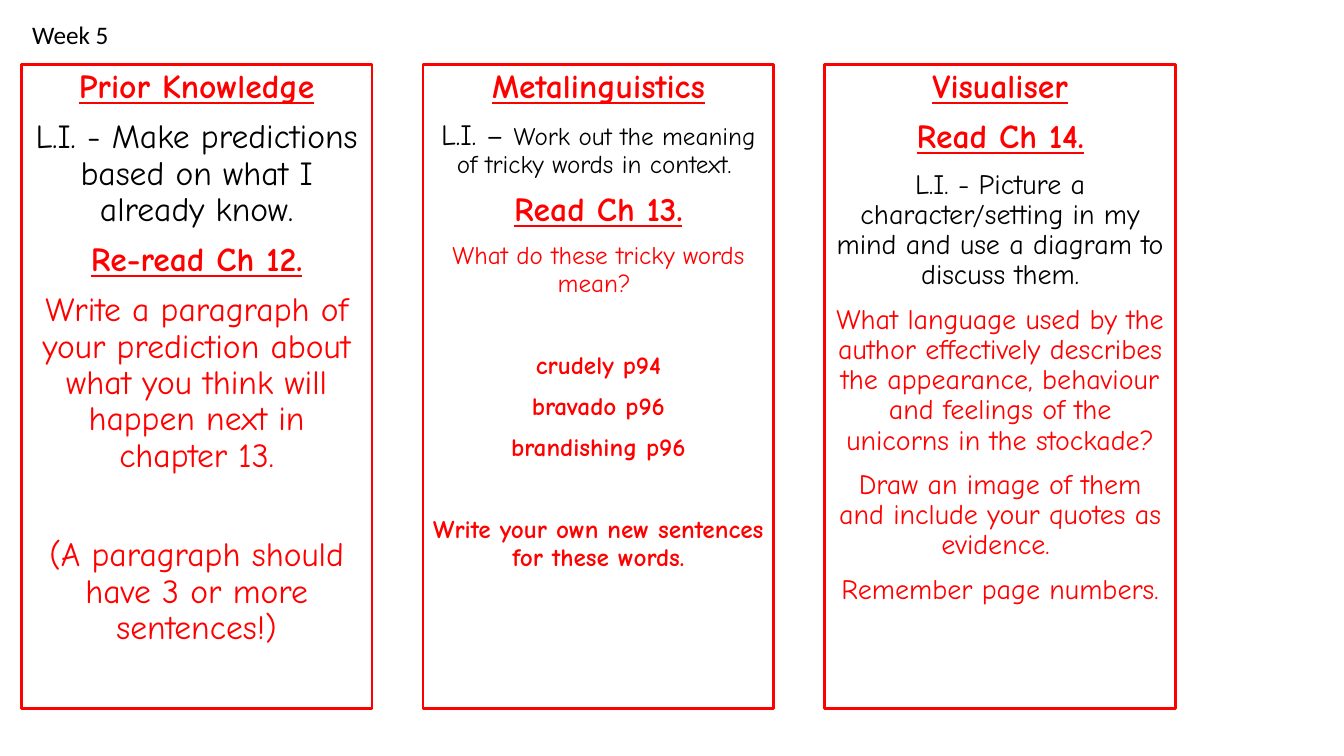
from dataclasses import dataclass

from pptx import Presentation
from pptx.dml.color import RGBColor
from pptx.enum.shapes import MSO_SHAPE as Shape
from pptx.enum.text import MSO_ANCHOR as Anchor, PP_ALIGN as Align
from pptx.slide import Slide
from pptx.text.text import TextFrame
from pptx.util import Inches, Pt

COLORS = {"red": "FF0000", "black": "000000"}
LESSON_FONT = "Comic Neue"
PANEL_LEFT, PANEL_TOP, PANEL_STEP = 0.21, 0.64, 3.985
PANEL_WIDTH, PANEL_HEIGHT = 3.48, 6.39


@dataclass(frozen=True)
class Line:
    text: str
    size: int
    color: str = "red"
    bold: bool = False
    underline: bool = False
    space_before: float = 10
    lead: str = ""
    lead_size: int = 0


def heading(text: str) -> Line:
    return Line(text, 24, bold=True, underline=True)


PANELS: list[list[Line]] = [
    [
        heading("Prior Knowledge"),
        Line("L.I. - Make predictions based on what I already know.", 24, "black"),
        heading("Re-read Ch 12."),
        Line("Write a paragraph of your prediction about what you think will "
             "happen next in chapter 13.", 24),
        Line("(A paragraph should have 3 or more sentences!)", 24, space_before=45.5),
    ],
    [
        heading("Metalinguistics"),
        Line("Work out the meaning of tricky words in context. ", 18, "black",
             lead="L.I. – ", lead_size=21),
        heading("Read Ch 13."),
        Line("What do these tricky words mean? ", 18),
        Line("crudely p94", 18, bold=True, space_before=39.3),
        Line("bravado p96", 18, bold=True),
        Line("brandishing p96", 18, bold=True),
        Line("Write your own new sentences for these words.", 18, bold=True,
             space_before=39.3),
    ],
    [
        heading("Visualiser"),
        heading("Read Ch 14."),
        Line("L.I. - Picture a character/setting in my mind and use a diagram "
             "to discuss them.", 20, "black"),
        Line("What language used by the author effectively describes the "
             "appearance, behaviour and feelings of the unicorns in the stockade?", 20),
        Line("Draw an image of them and include your quotes as evidence. ", 20),
        Line("Remember page numbers.", 20),
    ],
]


def rgb(name: str) -> RGBColor:
    return RGBColor.from_string(COLORS[name])


def write_lines(frame: TextFrame, lines: list[Line]) -> None:
    for index, line in enumerate(lines):
        paragraph = frame.add_paragraph() if index else frame.paragraphs[0]
        paragraph.alignment = Align.CENTER
        paragraph.line_spacing = 0.9
        paragraph.space_before = Pt(line.space_before)
        font = paragraph.font
        font.name = LESSON_FONT
        font.size = Pt(line.size)
        font.bold = line.bold
        font.underline = line.underline
        font.color.rgb = rgb(line.color)
        if line.lead:
            lead = paragraph.add_run()
            lead.text = line.lead
            lead.font.size = Pt(line.lead_size)
        paragraph.add_run().text = line.text


def add_panel(slide: Slide, left: float, lines: list[Line]) -> None:
    panel = slide.shapes.add_shape(
        Shape.RECTANGLE, Inches(left), Inches(PANEL_TOP),
        Inches(PANEL_WIDTH), Inches(PANEL_HEIGHT))
    panel.shadow.inherit = False
    panel.fill.background()
    panel.line.color.rgb = rgb("red")
    panel.line.width = Pt(2)
    frame = panel.text_frame
    frame.word_wrap = True
    frame.vertical_anchor = Anchor.TOP
    write_lines(frame, lines)


def add_week_label(slide: Slide) -> None:
    label = slide.shapes.add_textbox(
        Inches(0.22), Inches(0.14), Inches(1.94), Inches(0.4))
    label.text_frame.word_wrap = True
    paragraph = label.text_frame.paragraphs[0]
    paragraph.text = "Week 5"
    paragraph.font.name = "Calibri"
    paragraph.font.size = Pt(18)
    paragraph.font.color.rgb = rgb("black")


def main() -> None:
    presentation = Presentation()
    presentation.slide_width = Inches(13.33)
    presentation.slide_height = Inches(7.5)
    slide = presentation.slides.add_slide(presentation.slide_layouts[6])
    add_week_label(slide)
    for column, lines in enumerate(PANELS):
        add_panel(slide, PANEL_LEFT + column * PANEL_STEP, lines)
    presentation.save("out.pptx")


if __name__ == "__main__":
    main()
